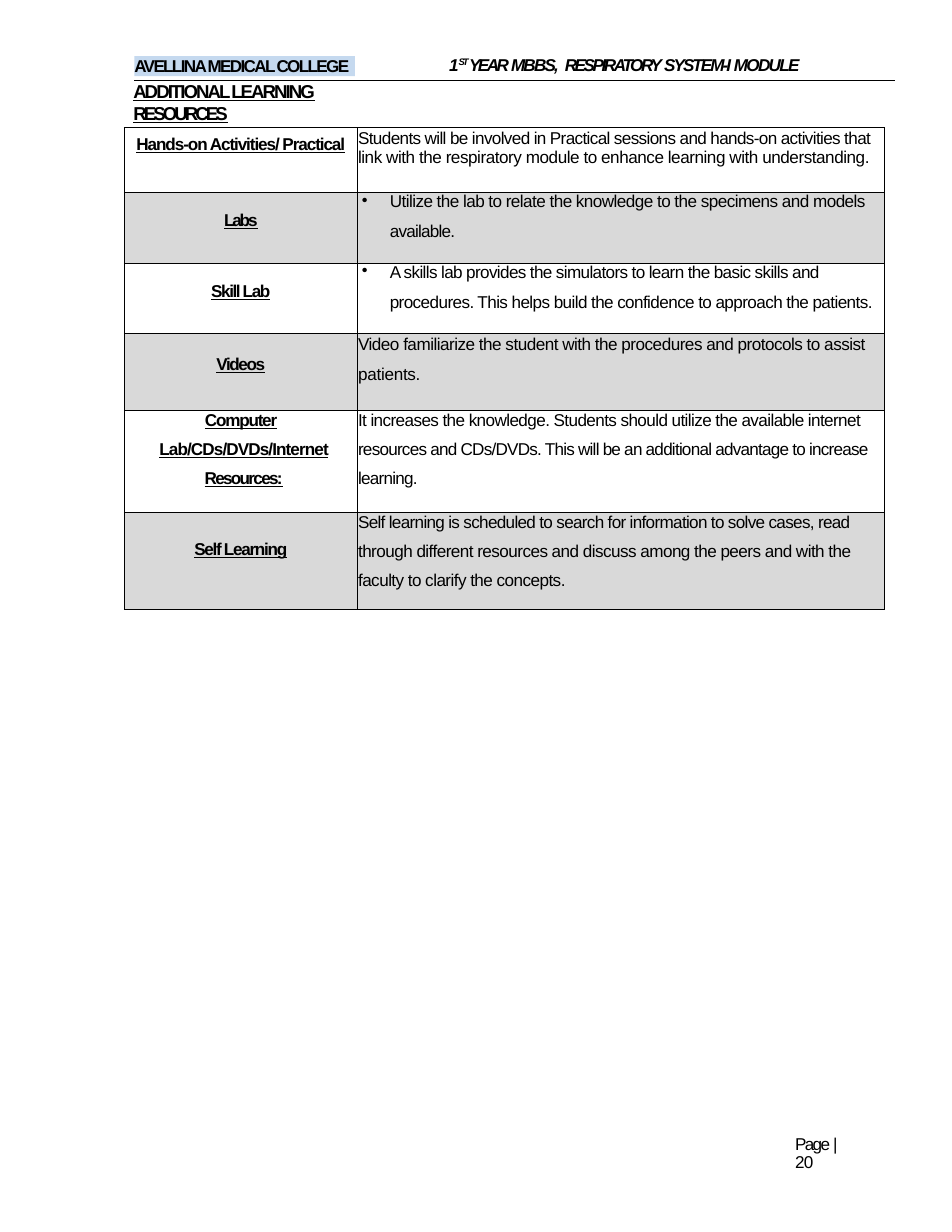
from lxml.etree import SubElement as Sub
from pptx import Presentation
from pptx.dml.color import RGBColor as RGB
from pptx.enum.shapes import MSO_CONNECTOR as Conn, MSO_SHAPE as Kind
from pptx.enum.text import MSO_ANCHOR as Anchor, PP_ALIGN as Align
from pptx.oxml.ns import qn
from pptx.util import Pt

HUE = {"ink": "000000", "band": "D9D9D9", "mark": "C5D9EF"}
INK = RGB.from_string(HUE["ink"])


def add(par, text, gap, size=11):
    """Add a run with its letter spacing in points."""
    run = par.add_run()
    run.text = text
    par.font.name, par.font.size = "Arial", Pt(size)
    par.font.color.rgb = INK
    props = run.font._element
    props.set("spc", str(round(gap * 100)))
    return props


def prep(shape, top=0):
    """Clear the insets of a text shape and give its first paragraph."""
    frame = shape.text_frame
    frame.word_wrap = True
    frame.margin_left = frame.margin_right = frame.margin_bottom = 0
    frame.margin_top = Pt(top)
    frame.vertical_anchor = Anchor.TOP
    par = frame.paragraphs[0]
    par.alignment = Align.LEFT
    return par


deck = Presentation()
deck.slide_width, deck.slide_height = Pt(612), Pt(792)
page = deck.slides.add_slide(deck.slide_layouts[6])
shapes = page.shapes

# Header rule
rule = shapes.add_connector(Conn.STRAIGHT, Pt(86.4), Pt(51.8), Pt(575.3), Pt(51.8))
rule.line.color.rgb = INK
rule.line.width = Pt(0.75)
Sub(rule._element.spPr, qn("a:effectLst"))

# Page number
foot = prep(shapes.add_textbox(Pt(511.2), Pt(730.1), Pt(46.1), Pt(13)))
foot.line_spacing = Pt(11.5)
for text, gap in [("Page ", -1.1), ("| ", 2.2), ("20", -0.6)]:
    add(foot, text, gap)

# College name
name = shapes.add_shape(Kind.RECTANGLE, Pt(86.4), Pt(36), Pt(141.8), Pt(13))
name.shadow.inherit = False
name.fill.solid()
name.fill.fore_color.rgb = RGB.from_string(HUE["mark"])
name.line.fill.background()
par = prep(name)
par.line_spacing = Pt(12.9)
par.font.bold = True
add(par, "AVELLINA MEDICAL COLLEGE", -1.1)

# Section title
title = prep(shapes.add_textbox(Pt(85.7), Pt(50.4), Pt(180.7), Pt(16.6)), 0.9)
title.font.bold = title.font.underline = True
add(title, "ADDITIONAL LEARNING", -1.27, 12)
title.add_line_break()
add(title, "RESOURCES", -1.9, 12)

# Module name
head = prep(shapes.add_textbox(Pt(288.7), Pt(33.8), Pt(282.2), Pt(14.4)), 0.9)
head.font.bold = head.font.italic = True
for text, gap in [("1", -0.9), ("ST ", -1.4), ("YEAR ", -1.7), ("MBBS,", -1.2),
                  (" ", 0.66), ("RESPIRATORY ", -1.6), ("SYSTEM-I ", -1.3),
                  ("MODULE", -1.1)]:
    props = add(head, text, gap)
    if text == "ST ":
        props.set("baseline", "32000")
        props.set("sz", "1050")

# Resources: height, label inset, label, label gap, body style, body lines
ROWS = [
    (41.6, 5, "Hands-on Activities/ Practical", -0.72, "tight", [
        ("Students will be involved in Practical sessions and hands-on activities that", -0.42),
        ("link with the respiratory module to enhance learning with understanding.", -0.3)]),
    (45.4, 12.2, "Labs", -1.4, "list", [
        ("Utilize the lab to relate the knowledge to the specimens and models", -0.37),
        ("available.", -0.5)]),
    (45.4, 12.2, "Skill Lab", -0.9, "list", [
        ("A skills lab provides the simulators to learn the basic skills and", -0.43),
        ("procedures. This helps build the confidence to approach the patients.", -0.4)]),
    (49.2, 13.8, "Videos", -0.9, "open", [
        ("Video familiarize the student with the procedures and protocols to assist", -0.34),
        ("patients.", -0.2)]),
    (65.5, 0, "Computer", -0.8, "wide", [
        ("It increases the knowledge. Students should utilize the available internet", -0.41),
        ("resources and CDs/DVDs. This will be an additional advantage to increase learning.",
         -0.5)]),
    (62.8, 18, "Self Learning", -0.85, "wide", [
        ("Self learning is scheduled to search for information to solve cases, read", -0.45),
        ("through different resources and discuss among the peers and with the "
         "faculty to clarify the concepts.", -0.38)]),
]
BEFORE = {"tight": 0.2, "list": 7, "open": 7, "wide": 0}

# Table
grid = shapes.add_table(len(ROWS), 2, Pt(79.9), Pt(82.1), Pt(488.9), Pt(309.9)).table
grid.first_row = grid.horz_banding = False
grid.columns[0].width, grid.columns[1].width = Pt(149.8), Pt(339.1)

for i, (high, inset, label, gap, style, lines) in enumerate(ROWS):
    grid.rows[i].height = Pt(high)
    left, right = grid.cell(i, 0), grid.cell(i, 1)

    # Borders and bands
    for cell in (left, right):
        cell.margin_left = cell.margin_right = 0
        cell.margin_top = cell.margin_bottom = 0
        props = cell._tc.get_or_add_tcPr()
        for side in ("lnL", "lnR", "lnT", "lnB"):
            edge = Sub(props, qn("a:" + side), w=str(Pt(0.5)))
            Sub(Sub(edge, qn("a:solidFill")), qn("a:srgbClr"), val=HUE["ink"])
        if i % 2:
            cell.fill.solid()
            cell.fill.fore_color.rgb = RGB.from_string(HUE["band"])
        else:
            cell.fill.background()

    # Label
    left.margin_top = Pt(inset)
    par = left.text_frame.paragraphs[0]
    par.alignment = Align.CENTER
    par.font.bold = par.font.underline = True
    add(par, label, gap)
    if label == "Computer":
        par.alignment = Align.LEFT
        par.line_spacing = Pt(12.9)
        par._p.get_or_add_pPr().set("marL", str(Pt(51.8)))
        par = left.text_frame.add_paragraph()
        par.alignment = Align.CENTER
        par.line_spacing = 1.53
        par.font.bold = par.font.underline = True
        form = par._p.get_or_add_pPr()
        form.set("marL", str(Pt(20.2)))
        form.set("marR", str(Pt(16.6)))
        add(par, "Lab/CDs/DVDs/Internet ", -0.6)
        add(par, "Resources:", -1.1)

    # Body
    for j, (text, gap) in enumerate(lines):
        frame = right.text_frame
        par = frame.add_paragraph() if j else frame.paragraphs[0]
        form = par._p.get_or_add_pPr()
        form.set("marL", str(Pt(20.9 if style == "list" else 0.5)))
        if j:
            par.space_before = Pt(BEFORE[style])
            if style == "wide":
                par.line_spacing = 1.53
        elif style == "list":
            form.set("indent", str(Pt(-18)))
            Sub(form, qn("a:buChar"), char="•")
        else:
            par.line_spacing = Pt(12.9)
        add(par, text, gap)

deck.save("out.pptx")
